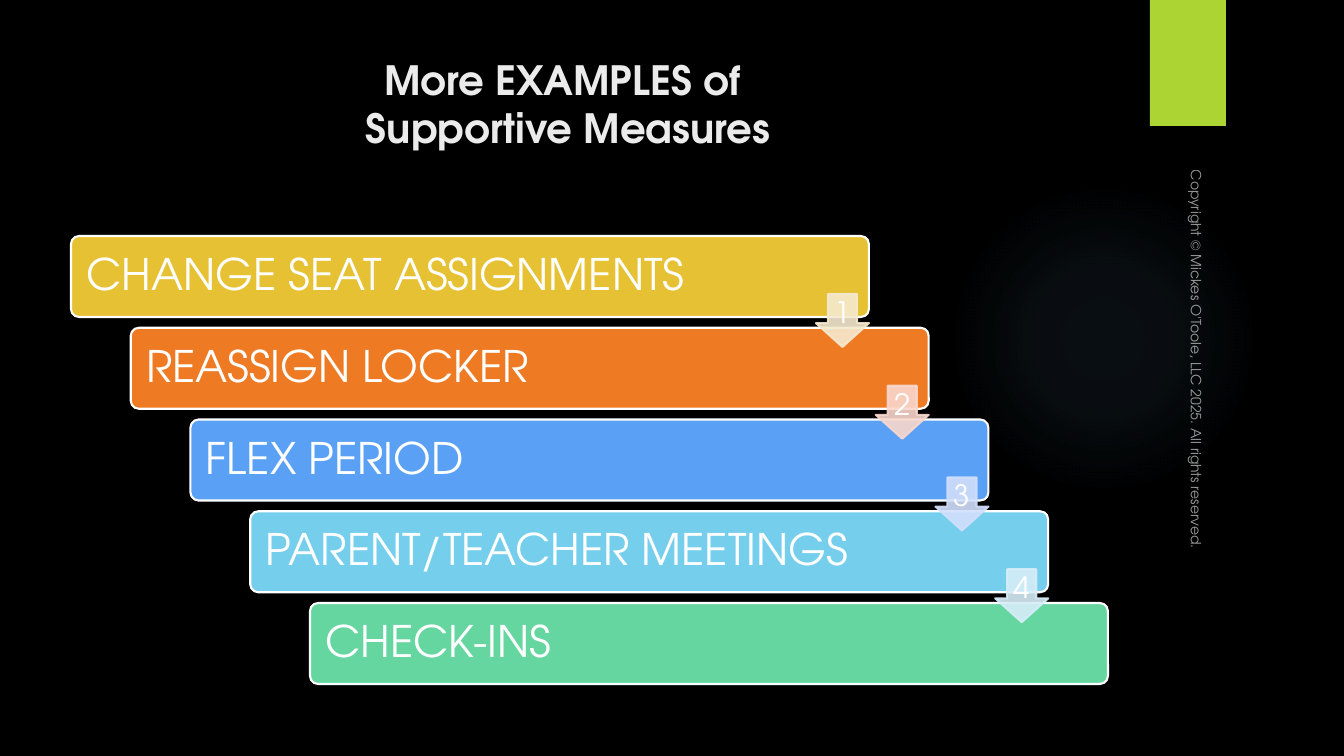
import pptx
import pptx.dml.color
import pptx.enum.shapes
import pptx.enum.text
import pptx.oxml
import pptx.oxml.ns
import pptx.util
from lxml import etree

# Content
TITLE = "More EXAMPLES of \vSupportive Measures"
COPYRIGHT = "Copyright © Mickes O'Toole, LLC 2025. All rights reserved."
MEASURES = [  # text, bar colour
    ("CHANGE SEAT ASSIGNMENTS", "E6C133"),
    ("REASSIGN LOCKER", "EF7A24"),
    ("FLEX PERIOD", "5AA0F5"),
    ("PARENT/TEACHER MEETINGS", "75CEEC"),
    ("CHECK-INS", "65D6A0"),
]
ARROW_COLOURS = ["F5E9CE", "F9D7CD", "D2DFFB", "D6EDF8"]
GLOW_COLOUR = "7AC4F0"
GLOW_STOPS = [(0, 7), (36, 6), (69, 0), (100, 0)]  # position %, opacity %

# Layout in px
SLIDE = (1344, 756)
TITLE_BOX = (27, 50, 1082, 154)
COPYRIGHT_BOX = (987, 356, 425, 33)
GLOW_BOX = (949, 184, 310, 310)
TAB_BOX = (1150, 0, 76, 126)
FIRST_BAR, LAST_BAR = (71, 236), (310, 603)
BAR_SIZE = (798, 81)
ARROW_SIZE = 53
ARROW_DROP = 58
EMU_PER_PX = 914400 / 100.8

FONT = "TeX Gyre Adventor"
SHAPES = pptx.enum.shapes.MSO_SHAPE
ALIGN = pptx.enum.text.PP_ALIGN
ANCHOR = pptx.enum.text.MSO_ANCHOR


def px(length):
    return pptx.util.Emu(round(length * EMU_PER_PX))


def rgb(colour):
    return pptx.dml.color.RGBColor.from_string(colour)


def fade(element, percent):
    for colour in element.iter(pptx.oxml.ns.qn("a:srgbClr")):
        alpha = etree.SubElement(colour, pptx.oxml.ns.qn("a:alpha"))
        alpha.set("val", str(percent * 1000))


def write(box, text, size, colour="FFFFFF", align=ALIGN.LEFT,
          bold=False, spacing=1.0, **frame_format):
    frame = box.text_frame
    frame_format = {"word_wrap": True,
                    "auto_size": pptx.enum.text.MSO_AUTO_SIZE.NONE, **frame_format}
    for name, value in frame_format.items():
        setattr(frame, name, value)
    frame.text = text
    para = frame.paragraphs[0]
    para.alignment = align
    para.line_spacing = spacing
    for span in para.runs:
        for name, value in {"name": FONT, "size": pptx.util.Pt(size), "bold": bold}.items():
            setattr(span.font, name, value)
        span.font.color.rgb = rgb(colour)


def add_shape(page, kind, box, fill, line=None, adjustments=()):
    shape = page.shapes.add_shape(kind, *map(px, box))
    shape.shadow.inherit = False
    for index, value in enumerate(adjustments):
        shape.adjustments[index] = value
    shape.fill.solid()
    shape.fill.fore_color.rgb = rgb(fill)
    if line:
        shape.line.color.rgb = rgb(line)
        shape.line.width = pptx.util.Pt(1.5)
    else:
        shape.line.fill.background()
    return shape


def add_glow(page):
    glow = add_shape(page, SHAPES.OVAL, GLOW_BOX, GLOW_COLOUR)
    stops = "".join(
        f'<a:gs pos="{position * 1000}"><a:srgbClr val="{GLOW_COLOUR}">'
        f'<a:alpha val="{opacity * 1000}"/></a:srgbClr></a:gs>'
        for position, opacity in GLOW_STOPS)
    gradient = pptx.oxml.parse_xml(
        f'<a:gradFill {pptx.oxml.ns.nsdecls("a")}><a:gsLst>{stops}</a:gsLst>'
        '<a:path path="circle"><a:fillToRect l="50000" t="50000" r="50000" b="50000"/>'
        '</a:path></a:gradFill>')
    properties = glow.element.spPr
    properties.replace(properties.find(pptx.oxml.ns.qn("a:solidFill")), gradient)


def add_staircase(page):
    steps = len(MEASURES) - 1
    corners = [[start + (end - start) * index / steps
                for start, end in zip(FIRST_BAR, LAST_BAR)]
               for index in range(len(MEASURES))]

    # Bars
    for (left, top), (text, colour) in zip(corners, MEASURES):
        bar = add_shape(page, SHAPES.ROUNDED_RECTANGLE, (left, top, *BAR_SIZE),
                        colour, "FFFFFF", [0.1])
        write(bar, text, 31, spacing=0.9, vertical_anchor=ANCHOR.MIDDLE,
              margin_left=px(13), margin_right=px(13))

    # Numbered arrows at the right end of each bar but the last
    for number, ((left, top), colour) in enumerate(zip(corners, ARROW_COLOURS), 1):
        box = (left + BAR_SIZE[0] - ARROW_SIZE, top + ARROW_DROP, ARROW_SIZE, ARROW_SIZE)
        arrow = add_shape(page, SHAPES.DOWN_ARROW, box, colour, colour, [0.55, 0.45])
        fade(arrow.element.spPr, 90)
        margins = {f"margin_{side}": px(3) for side in ("left", "top", "right", "bottom")}
        write(arrow, str(number), 21, align=ALIGN.CENTER, spacing=0.9,
              vertical_anchor=ANCHOR.MIDDLE, **margins)


def main():
    deck = pptx.Presentation()
    deck.slide_width, deck.slide_height = map(px, SLIDE)
    page = deck.slides.add_slide(deck.slide_layouts[5])
    page.background.fill.solid()
    page.background.fill.fore_color.rgb = rgb("000000")

    # Decoration
    add_glow(page)
    add_shape(page, SHAPES.RECTANGLE, TAB_BOX, "ACD433")

    # Title
    title = page.shapes.title
    for name, value in zip(("left", "top", "width", "height"), TITLE_BOX):
        setattr(title, name, px(value))
    write(title, TITLE, 28.8, "EBEBEB", ALIGN.CENTER, True, vertical_anchor=ANCHOR.TOP)

    # Copyright line down the right side
    notice = page.shapes.add_textbox(*map(px, COPYRIGHT_BOX))
    notice.rotation = 90
    write(notice, COPYRIGHT, 10, vertical_anchor=ANCHOR.BOTTOM)
    fade(notice.element.txBody, 60)

    add_staircase(page)
    deck.save("out.pptx")


if __name__ == "__main__":
    main()
